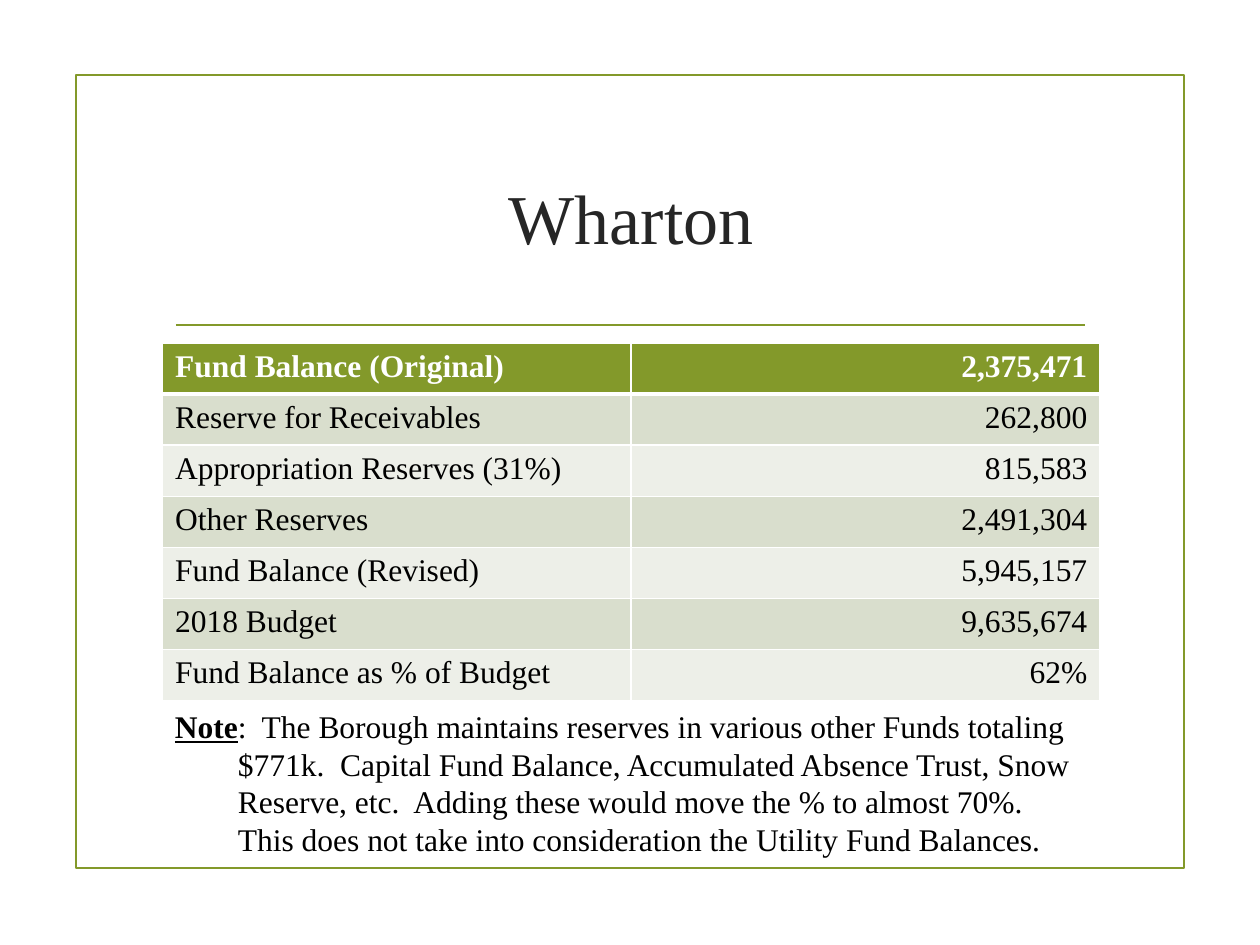
from lxml import etree
from pptx import Presentation
from pptx import util as u
from pptx.dml.color import RGBColor
from pptx.enum import shapes, text
from pptx.oxml import ns

FONT = "Times New Roman"
COLORS = {
    "green": "83992A",
    "title": "262626",
    "text": "000000",
    "white": "FFFFFF",
    "dark_band": "D9DECD",
    "light_band": "EDEFE8",
}
LEFT, WIDTH = 92.88, 535.68
ROW_HEIGHT = 29.2
BALANCES = [
    ("Fund Balance (Original)", "2,375,471"),
    ("Reserve for Receivables", "262,800"),
    ("Appropriation Reserves (31%)", "815,583"),
    ("Other Reserves", "2,491,304"),
    ("Fund Balance (Revised)", "5,945,157"),
    ("2018 Budget", "9,635,674"),
    ("Fund Balance as % of Budget", "62%"),
]
NOTE = [
    [("Note", True), (":  The Borough maintains reserves in various other Funds totaling", False)],
    [("\t$771k.  Capital Fund Balance, Accumulated Absence Trust, Snow", False)],
    [("\tReserve, etc.  Adding these would move the % to almost 70%.", False)],
    [("\tThis does not take into consideration the Utility Fund Balances.", False)],
]


def color(name):
    """Return the named colour."""
    return RGBColor.from_string(COLORS[name])


def box(left, top, width, height):
    """Convert four lengths in points."""
    return [u.Pt(value) for value in (left, top, width, height)]


def add_run(paragraph, words, size, color_name, bold=False, underline=False):
    """Add one formatted run to a paragraph."""
    run = paragraph.add_run()
    run.text = words
    font = run.font
    font.name, font.size = FONT, u.Pt(size)
    font.bold, font.underline = bold, underline
    font.color.rgb = color(color_name)


def add_frame(slide):
    """Draw the green border and the rule under the title."""
    border = slide.shapes.add_shape(
        shapes.MSO_SHAPE.RECTANGLE, *box(43.5, 42.75, 633, 453.5))
    border.shadow.inherit = False
    border.fill.background()
    rule = slide.shapes.add_connector(
        shapes.MSO_CONNECTOR.STRAIGHT, *box(100.5, 185.6, 620, 185.6))
    etree.SubElement(rule._element.spPr, ns.qn("a:effectLst"))
    for shape in (border, rule):
        shape.line.color.rgb = color("green")
        shape.line.width = u.Pt(1.25)


def set_title(slide, words):
    """Place and fill the title placeholder."""
    title = slide.shapes.title
    title.left, title.top, title.width, title.height = box(LEFT, 72, WIDTH, 103)
    title.text_frame.vertical_anchor = text.MSO_ANCHOR.MIDDLE
    paragraph = title.text_frame.paragraphs[0]
    paragraph.alignment = text.PP_ALIGN.CENTER
    add_run(paragraph, words, 40, "title")


def set_borders(cell, widths):
    """Give a cell white borders of the given widths."""
    properties = cell._tc.get_or_add_tcPr()
    for side, width in widths.items():
        line = etree.SubElement(properties, ns.qn(f"a:ln{side}"), w=str(u.Pt(width)))
        fill = etree.SubElement(line, ns.qn("a:solidFill"))
        etree.SubElement(fill, ns.qn("a:srgbClr"), val=COLORS["white"])


def add_balance_table(slide):
    """Add the banded table of fund balances."""
    rows = len(BALANCES)
    table = slide.shapes.add_table(
        rows, 2, *box(LEFT, 196, WIDTH, rows * ROW_HEIGHT)).table
    for row, values in enumerate(BALANCES):
        table.rows[row].height = u.Pt(ROW_HEIGHT)
        header = row == 0
        band = "green" if header else "dark_band" if row % 2 else "light_band"
        for column, words in enumerate(values):
            cell = table.cell(row, column)
            set_borders(cell, {"L": 1, "R": 1, "T": 3 if row == 1 else 1,
                               "B": 3 if header else 1})
            cell.fill.solid()
            cell.fill.fore_color.rgb = color(band)
            paragraph = cell.text_frame.paragraphs[0]
            paragraph.alignment = text.PP_ALIGN.RIGHT if column else text.PP_ALIGN.LEFT
            add_run(paragraph, words, 18, "white" if header else "text", header)


def add_note(slide):
    """Add the note with its tabbed continuation lines."""
    shape = slide.shapes.add_textbox(*box(LEFT, 400.4, WIDTH, 94.5))
    frame = shape.text_frame
    frame.word_wrap = True
    frame.auto_size = text.MSO_AUTO_SIZE.SHAPE_TO_FIT_TEXT
    for index, runs in enumerate(NOTE):
        paragraph = frame.add_paragraph() if index else frame.paragraphs[0]
        tabs = etree.SubElement(paragraph._p.get_or_add_pPr(), ns.qn("a:tabLst"))
        etree.SubElement(tabs, ns.qn("a:tab"), pos=str(u.Pt(36)), algn="l")
        for words, strong in runs:
            add_run(paragraph, words, 18, "text", strong, strong)


def main():
    """Build and save the presentation."""
    presentation = Presentation()
    presentation.slide_width, presentation.slide_height = u.Pt(720), u.Pt(540)
    slide = presentation.slides.add_slide(presentation.slide_layouts[5])
    add_frame(slide)
    set_title(slide, "Wharton")
    add_balance_table(slide)
    add_note(slide)
    presentation.save("out.pptx")


if __name__ == "__main__":
    main()
